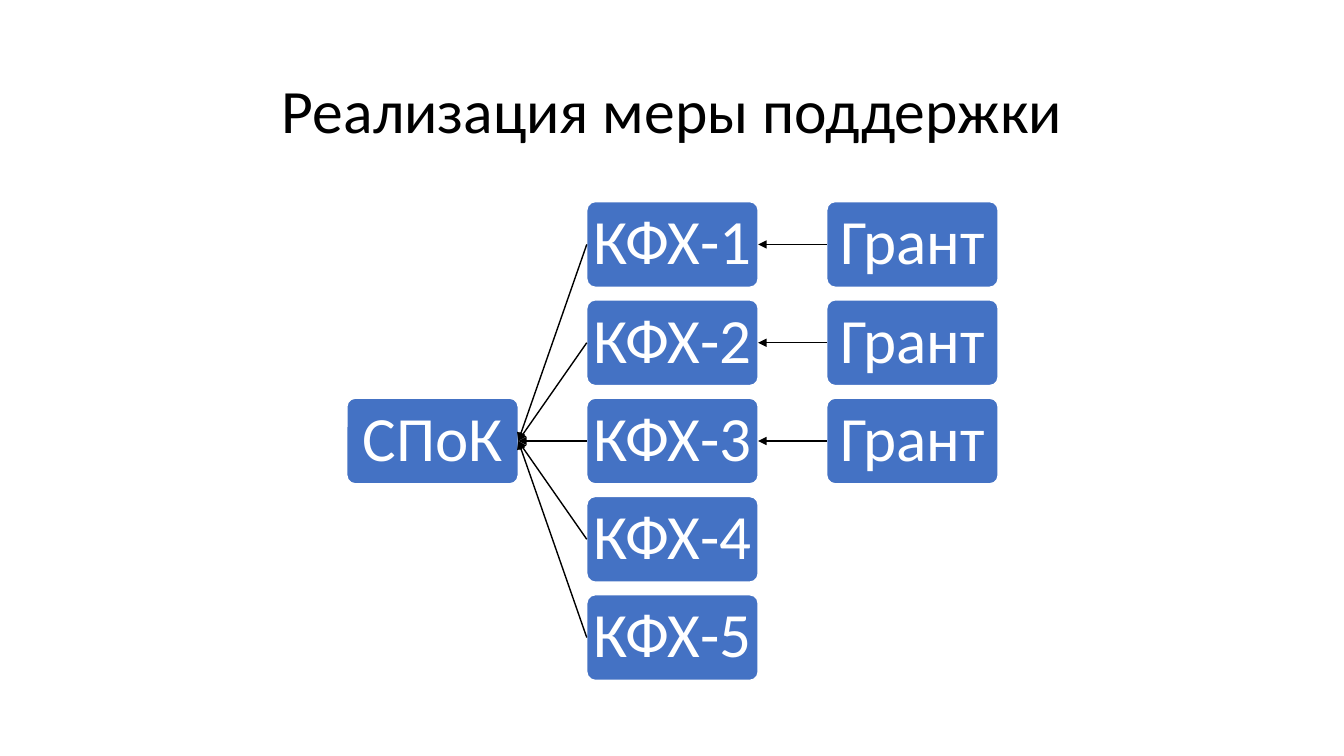
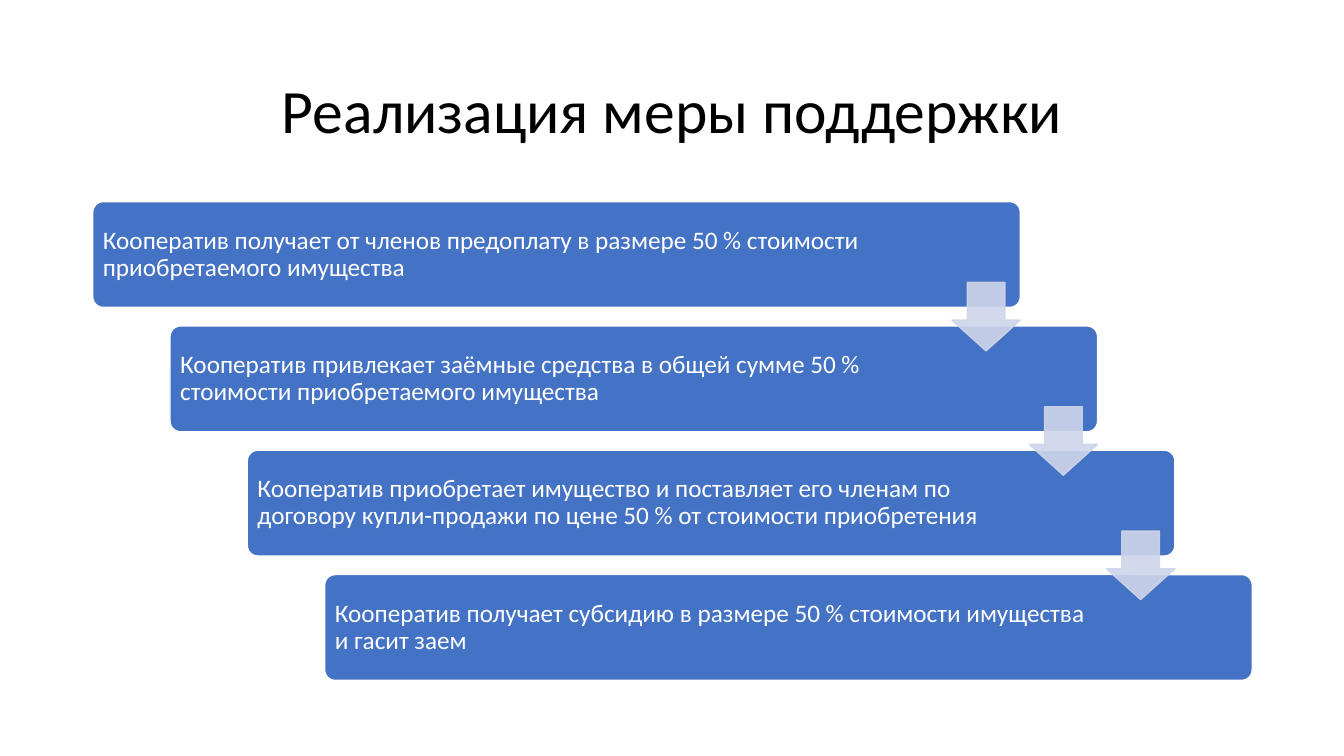
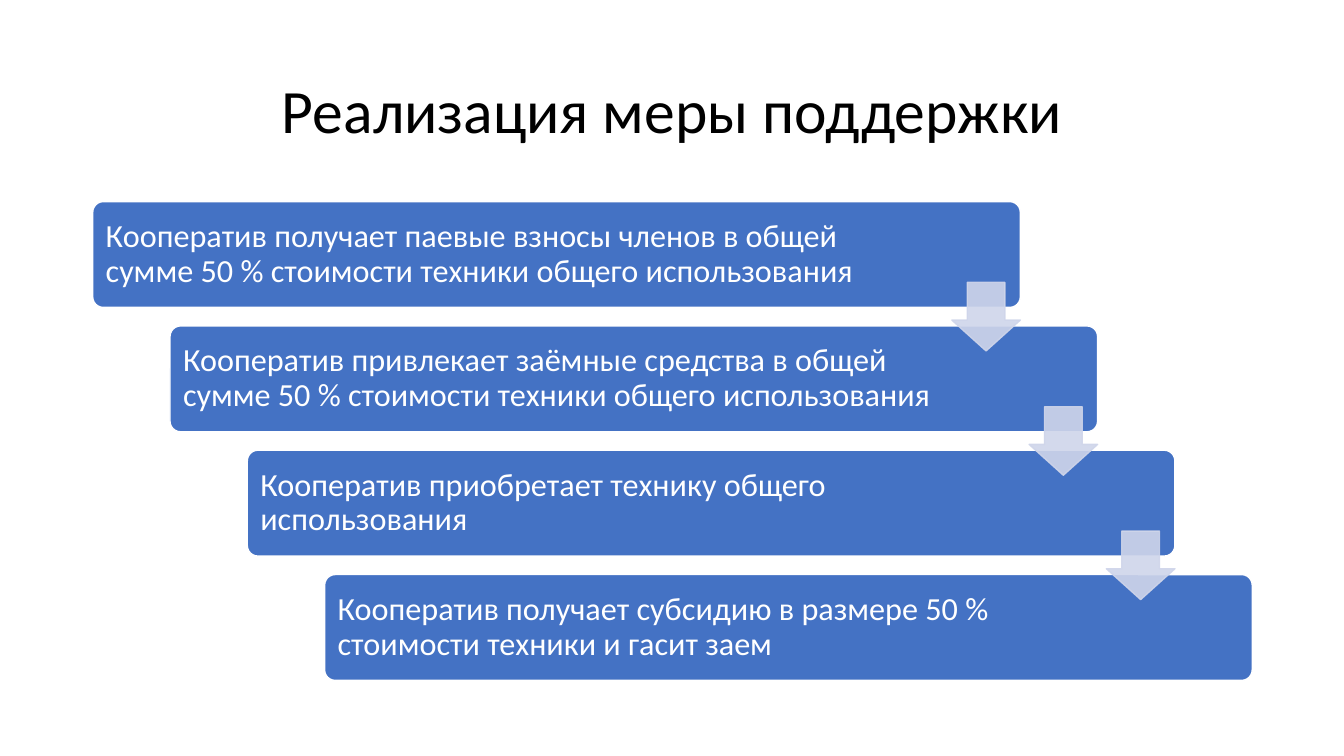
from dataclasses import dataclass

from pptx import Presentation
from pptx.dml.color import RGBColor
from pptx.enum.shapes import MSO_CONNECTOR as Link, MSO_SHAPE as Form
from pptx.enum.text import MSO_ANCHOR as Anchor, PP_ALIGN as Align
from pptx.oxml.ns import qn
from pptx.util import Inches, Pt
from lxml.etree import SubElement as Sub

BLUE, PALE, WHITE, BLACK = "4472C4", "CFD5EA", "FFFFFF", "000000"
FONT = "Calibri"
TITLE = "Реализация меры поддержки"
LEFT, RIGHT = 1, 3  # connection sites


def color(code):
    return RGBColor.from_string(code)


@dataclass
class Grid:
    """Equal cells spread over a field, first and last flush with its edges."""
    left: float
    top: float
    wide: float
    high: float
    cols: int
    rows: int
    w: float
    h: float

    @property
    def step(self):
        return ((self.wide - self.w) / (self.cols - 1),
                (self.high - self.h) / (self.rows - 1))

    def cell(self, col, row):
        dx, dy = self.step
        return self.left + col * dx, self.top + row * dy, self.w, self.h


HUB = Grid(3.44, 2, 6.46, 4.75, cols=3, rows=5, w=1.7, h=0.85)
STEPS = Grid(0.92, 2, 11.5, 4.75, cols=4, rows=4, w=9.2, h=1.05)


class Deck:
    def __init__(self):
        self.prs = Presentation()
        self.prs.slide_width = Inches(13.33)
        self.prs.slide_height = Inches(7.5)

    def page(self):
        self.slide = self.prs.slides.add_slide(self.prs.slide_layouts[6])
        box = self.slide.shapes.add_textbox(
            *map(Inches, (0.92, 0.4, 11.5, 1.45)))
        self.text(box, TITLE, 44, BLACK, Align.CENTER)

    def text(self, shape, words, size, ink, align, pads=(0.1, 0.05, 0.1, 0.05)):
        frame = shape.text_frame
        frame.word_wrap = True
        frame.vertical_anchor = Anchor.MIDDLE
        (frame.margin_left, frame.margin_top,
         frame.margin_right, frame.margin_bottom) = map(Inches, pads)
        para = frame.paragraphs[0]
        para.alignment = align
        para.line_spacing = 0.9
        run = para.add_run()
        run.text = words
        run.font.name = FONT
        run.font.size = Pt(size)
        run.font.color.rgb = color(ink)

    def shape(self, form, area, fill, line, adjust):
        item = self.slide.shapes.add_shape(form, *map(Inches, area))
        item.shadow.inherit = False
        item.fill.solid()
        item.fill.fore_color.rgb = color(fill)
        item.line.color.rgb = color(line)
        item.line.width = Pt(1)
        for i, share in enumerate(adjust):
            item.adjustments[i] = share
        return item

    def box(self, area, words, size, align, pads):
        item = self.shape(Form.ROUNDED_RECTANGLE, area, BLUE, WHITE, [0.1])
        self.text(item, words, size, WHITE, align, pads)
        return item

    def arrow(self, area):
        item = self.shape(Form.DOWN_ARROW, area, PALE, PALE, [0.55, 0.45])
        # Fill and line are 90 % opaque
        for tint in item._element.spPr.iter(qn("a:srgbClr")):
            Sub(tint, qn("a:alpha"), val="90000")

    def link(self, start, end):
        """Arrow from the left side of start to the right side of end."""
        line = self.slide.shapes.add_connector(Link.STRAIGHT, 0, 0, 0, 0)
        line.begin_connect(start, LEFT)
        line.end_connect(end, RIGHT)
        line.line.color.rgb = color(BLACK)
        line.line.width = Pt(1)
        Sub(line.line._get_or_add_ln(), qn("a:tailEnd"), type="triangle")
        Sub(line._element.spPr, qn("a:effectLst"))

    def node(self, col, row, words):
        return self.box(HUB.cell(col, row), words, 45, Align.CENTER, [0.03] * 4)

    def stairs(self, lines, size, pad):
        """Stepped boxes with an arrow across each gap."""
        self.page()
        for i, words in enumerate(lines):
            spare = 1.45 if i else 1.16  # room kept free for the arrows
            self.box(STEPS.cell(i, i), words, size, Align.LEFT,
                     (pad, pad, pad + spare, pad))
        side = 0.68
        for i in range(len(lines) - 1):
            x, y, w, h = STEPS.cell(i, i)
            mid = y + (h + STEPS.step[1]) / 2
            self.arrow((x + w - side, mid - side / 2, side, side))


def main():
    deck = Deck()

    # Slide 1: farms and grants around the cooperative
    deck.page()
    hub = deck.node(0, 2, "СПоК")
    for row in range(HUB.rows):
        farm = deck.node(1, row, f"КФХ-{row + 1}")
        deck.link(farm, hub)
        if row < 3:
            deck.link(deck.node(2, row, "Грант"), farm)

    # Slide 2: buying property for members
    deck.stairs([
        "Кооператив получает от членов предоплату в размере 50 % стоимости "
        "приобретаемого имущества",
        "Кооператив привлекает заёмные средства в общей сумме 50 % стоимости "
        "приобретаемого имущества",
        "Кооператив приобретает имущество и поставляет его членам по договору "
        "купли-продажи по цене 50 % от стоимости приобретения",
        "Кооператив получает субсидию в размере 50 % стоимости имущества "
        "и гасит заем",
    ], size=18, pad=0.07)

    # Slide 3: buying shared machinery
    deck.stairs([
        "Кооператив получает паевые взносы членов в общей сумме 50 % "
        "стоимости техники общего использования",
        "Кооператив привлекает заёмные средства в общей сумме 50 % "
        "стоимости техники общего использования",
        "Кооператив приобретает технику общего использования",
        "Кооператив получает субсидию в размере 50 % стоимости техники "
        "и гасит заем",
    ], size=23, pad=0.1)

    deck.prs.save("out.pptx")


if __name__ == "__main__":
    main()
